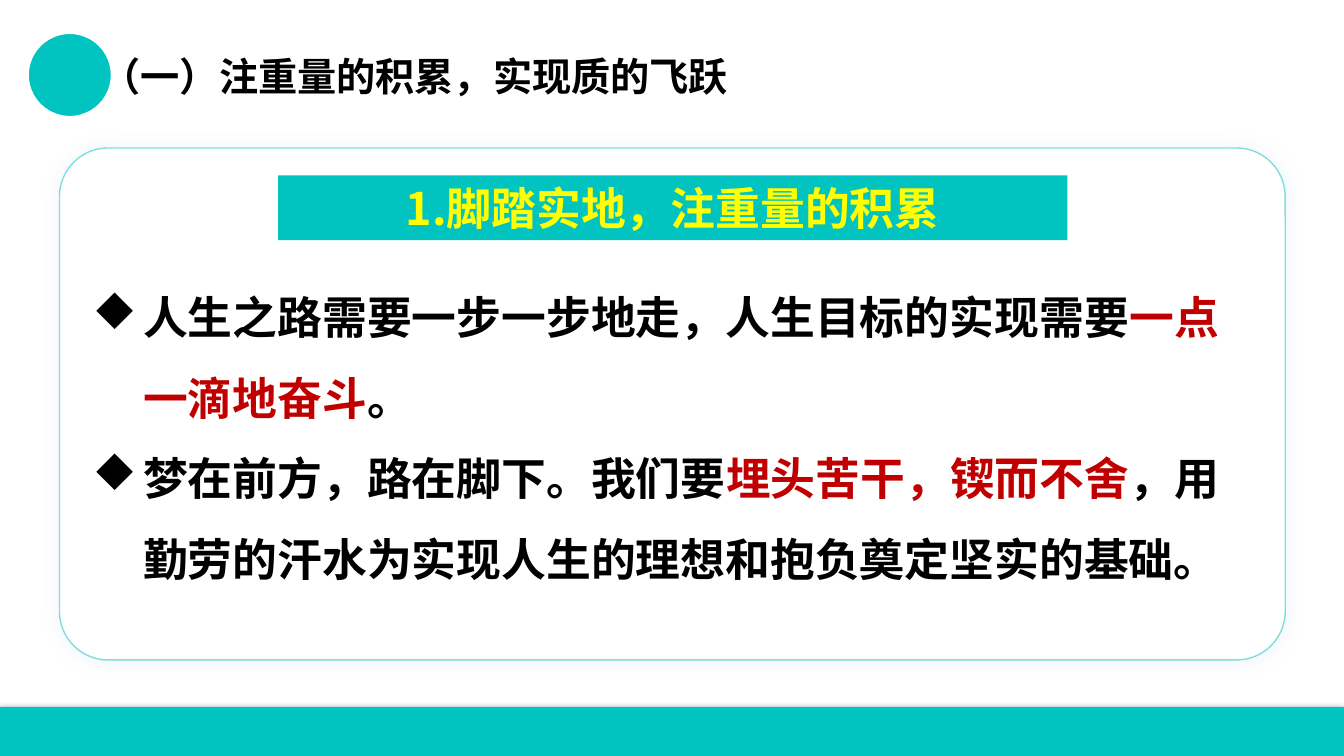
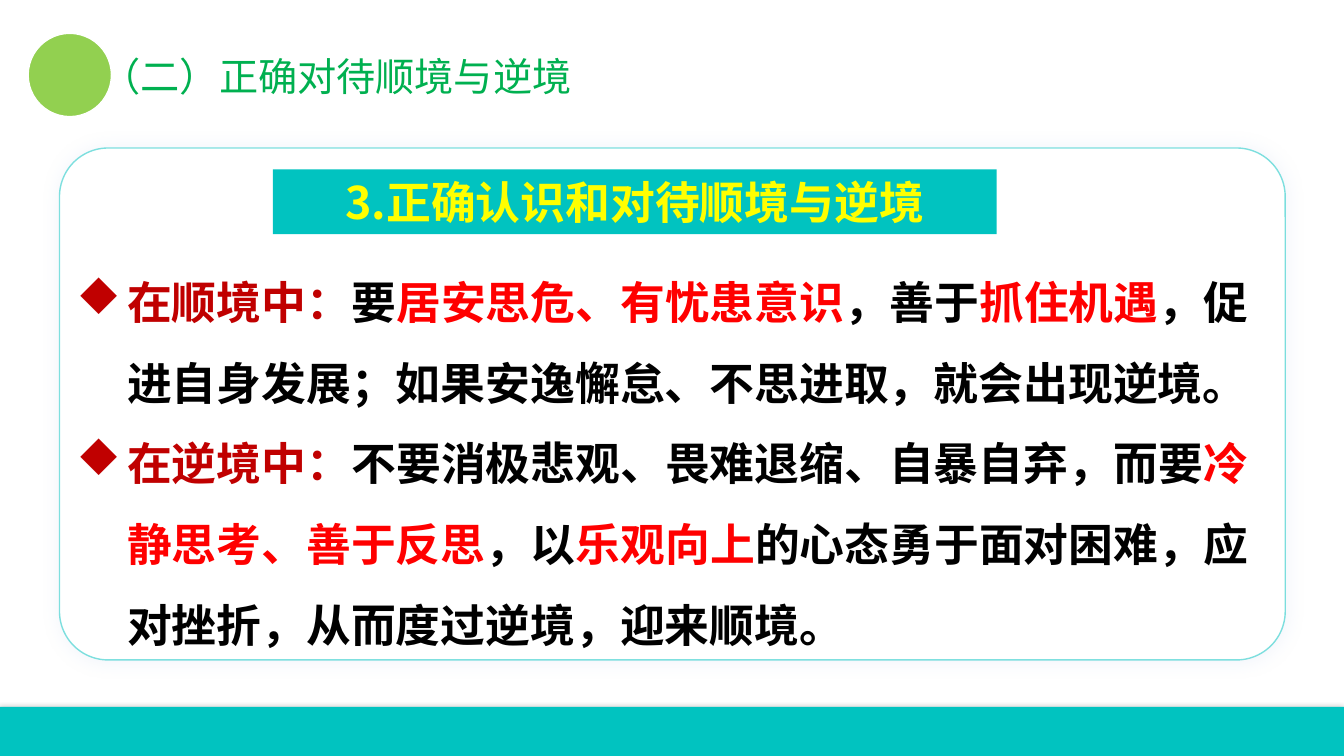
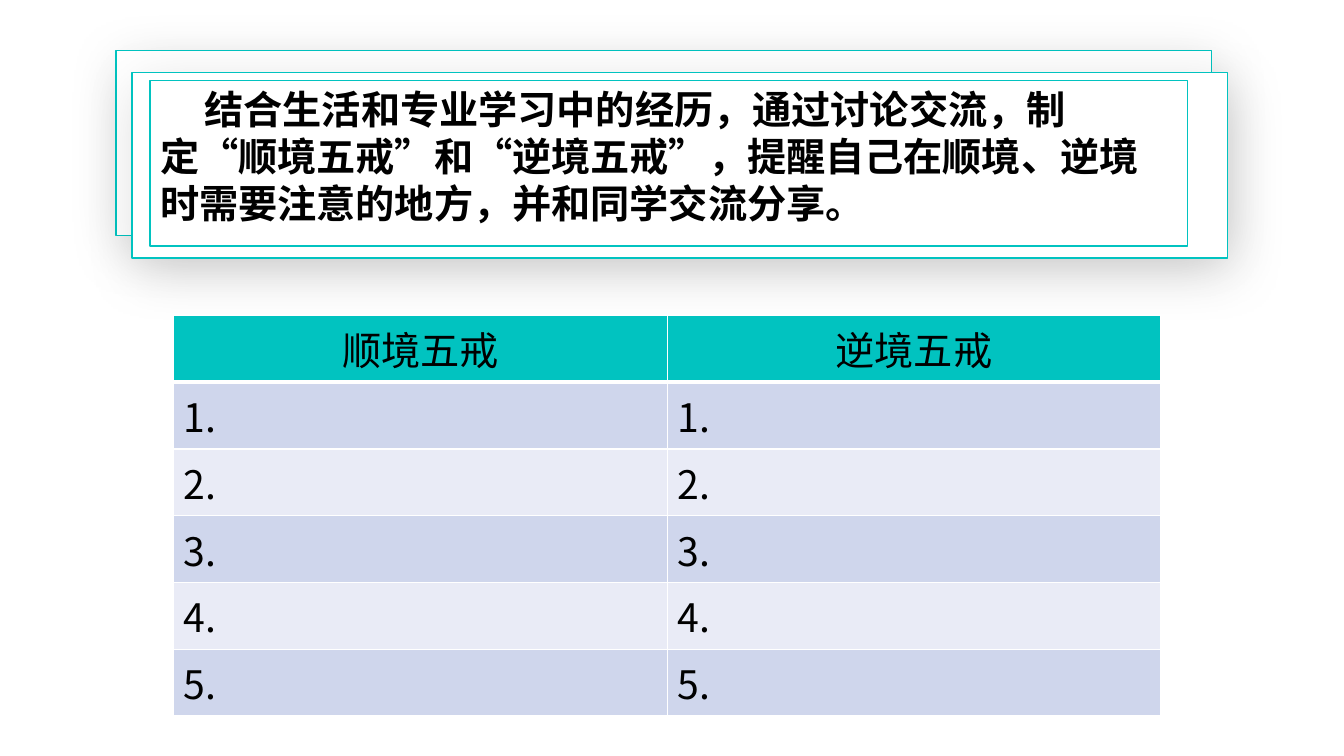
from lxml.etree import SubElement
from pptx import Presentation
from pptx.dml.color import RGBColor
from pptx.enum.shapes import MSO_SHAPE
from pptx.enum.text import MSO_ANCHOR, MSO_AUTO_SIZE, PP_ALIGN
from pptx.oxml.ns import qn
from pptx.util import Cm, Pt

FONT = "Noto Sans CJK SC"
TEAL = RGBColor(0x01, 0xC3, 0xC0)
LIME = RGBColor(0x92, 0xD0, 0x50)
GREEN = RGBColor(0x00, 0xB0, 0x50)
BLACK = RGBColor(0x00, 0x00, 0x00)
WHITE = RGBColor(0xFF, 0xFF, 0xFF)
YELLOW = RGBColor(0xFF, 0xFF, 0x00)
CRIMSON = RGBColor(0xC0, 0x00, 0x00)
RED = RGBColor(0xFF, 0x00, 0x00)
MIST = RGBColor(0xB6, 0xC7, 0xEA)
ROW_DARK = RGBColor(0xCF, 0xD6, 0xEC)
ROW_LIGHT = RGBColor(0xE9, 0xEB, 0xF6)

PAGE_WIDTH, PAGE_HEIGHT = 33.87, 19.05
HEADER = (0.71, 0.84, 21.9, 2.1)
CARD = (1.5, 3.73, 30.89, 12.9)
FOOTER = (0, 17.81, PAGE_WIDTH, 1.24)
PROMPT = (2.92, 1.27, 28.02, 5.23)
TABLE = (4.38, 7.95, 24.87, 10.08)
LINE_FACTOR = 1.2


def within(box, left, top, width, height):
    """Return an area given relative to the corner of a box."""
    return box[0] + left, box[1] + top, width, height


def add_shadow(shape, color, opacity, blur, distance, angle):
    """Give a shape an outer shadow."""
    effects = shape._element.spPr.find(qn("a:effectLst"))
    shadow = SubElement(effects, qn("a:outerShdw"), blurRad=str(Pt(blur)),
                        dist=str(Pt(distance)), dir=str(angle * 60000), rotWithShape="0")
    tint = SubElement(shadow, qn("a:srgbClr"), val=str(color))
    SubElement(tint, qn("a:alpha"), val=str(opacity * 1000))


def add_box(page, kind, area, fill, line=None, shadow=None):
    """Add a preset shape with a plain fill, outline and shadow."""
    shape = page.shapes.add_shape(kind, *map(Cm, area))
    shape.fill.solid()
    shape.fill.fore_color.rgb = fill
    if line is None:
        shape.line.fill.background()
    else:
        shape.line.color.rgb = line
        shape.line.width = Pt(1)
    shape.shadow.inherit = False
    if shadow:
        add_shadow(shape, *shadow)
    return shape


def style_font(para, size, bold):
    """Set the font of a whole paragraph, for Latin and Chinese text."""
    para.font.name = FONT
    para.font.size = Pt(size)
    para.font.bold = bold
    SubElement(para.font._element, qn("a:ea"), typeface=FONT)


def write_para(para, spans, size, bold=True, align=PP_ALIGN.LEFT, spacing=LINE_FACTOR):
    """Write coloured spans into a paragraph."""
    style_font(para, size, bold)
    para.alignment = align
    para.space_before = Pt(0)
    if spacing:
        para.line_spacing = Pt(round(size * spacing, 1))
    for text, color in spans:
        span = para.add_run()
        span.text = text
        span.font.color.rgb = color


def place_text(page, shape, area, anchor=MSO_ANCHOR.TOP):
    """Move a placeholder to an area, in front of what is drawn so far."""
    shape.left, shape.top, shape.width, shape.height = map(Cm, area)
    page.shapes._spTree.append(shape._element)
    frame = shape.text_frame
    frame.word_wrap = True
    frame.auto_size = MSO_AUTO_SIZE.NONE
    frame.vertical_anchor = anchor
    return frame


def set_indent(para, margin, first):
    """Set the left margin and first-line indent of a paragraph."""
    properties = para._p.get_or_add_pPr()
    properties.set("marL", str(Cm(margin)))
    properties.set("indent", str(Cm(first)))
    return properties


def add_header(page, box, text, text_color, dot_color, bold):
    """Draw the round mark and the title beside it."""
    add_box(page, MSO_SHAPE.OVAL, within(box, 0, 0, 2.1, 2.1), dot_color, WHITE)
    frame = place_text(page, page.shapes.title, within(box, 1.6, 0.35, 20.3, 1.45))
    write_para(frame.paragraphs[0], [(text, text_color)], 28, bold)


def add_card(page, box, heading, heading_area, items, items_area):
    """Draw the rounded card with its heading band and diamond list."""
    card = add_box(page, MSO_SHAPE.ROUNDED_RECTANGLE, box, WHITE, TEAL, (MIST, 20, 14, 1, 45))
    card.adjustments[0] = 0.095
    line_color = card.line._ln.find(".//" + qn("a:srgbClr"))
    SubElement(line_color, qn("a:alpha"), val="50000")

    band = add_box(page, MSO_SHAPE.RECTANGLE, within(box, *heading_area), TEAL)
    band.text_frame.word_wrap = True
    band.text_frame.vertical_anchor = MSO_ANCHOR.MIDDLE
    write_para(band.text_frame.paragraphs[0], [(heading, YELLOW)], 32, align=PP_ALIGN.CENTER)

    frame = place_text(page, page.placeholders[1], within(box, *items_area))
    for index, spans in enumerate(items):
        para = frame.add_paragraph() if index else frame.paragraphs[0]
        properties = set_indent(para, 1.27, -1.27)
        SubElement(properties, qn("a:buFont"), typeface="Wingdings", charset="2")
        SubElement(properties, qn("a:buChar"), char="u")
        write_para(para, spans, 32, spacing=1.5 * LINE_FACTOR)


def add_lesson_page(deck, header, card):
    """Build a page with a header, a card and the footer band."""
    page = deck.slides.add_slide(deck.slide_layouts[1])
    add_box(page, MSO_SHAPE.RECTANGLE, FOOTER, TEAL, shadow=(BLACK, 30, 3, 1, 180))
    add_header(page, HEADER, *header)
    add_card(page, CARD, *card)


def add_prompt(page, box, text):
    """Draw two stacked sheets with the framed task on top."""
    for left, top in ((0, 0), (0.41, 0.56)):
        add_box(page, MSO_SHAPE.RECTANGLE, within(box, left, top, 27.61, 4.67),
                WHITE, TEAL, (BLACK, 15, 40, 10, 70))
    title = page.shapes.title
    title.line.color.rgb = TEAL
    title.line.width = Pt(0.75)
    frame = place_text(page, title, within(box, 0.86, 0.76, 26.14, 4.17))
    para = frame.paragraphs[0]
    set_indent(para, 0, 1.12)
    write_para(para, [(text, BLACK)], 28)


def set_borders(cell, bottom):
    """Give a cell white borders with a chosen bottom width."""
    properties = cell._tc.get_or_add_tcPr()
    for side, width in (("lnL", 1), ("lnR", 1), ("lnT", 1), ("lnB", bottom)):
        line = SubElement(properties, qn("a:" + side), w=str(Pt(width)))
        fill = SubElement(line, qn("a:solidFill"))
        SubElement(fill, qn("a:srgbClr"), val=str(WHITE))


def add_rules_table(page, box, headings, count):
    """Draw a table of numbered blanks under headings."""
    rows = [headings] + [[f"{number}."] * len(headings) for number in range(1, count + 1)]
    table = page.shapes.add_table(len(rows), len(headings), *map(Cm, box)).table
    for row_index, texts in enumerate(rows):
        is_head = row_index == 0
        color = TEAL if is_head else (ROW_LIGHT, ROW_DARK)[row_index % 2]
        align = PP_ALIGN.CENTER if is_head else PP_ALIGN.LEFT
        for column_index, text in enumerate(texts):
            cell = table.cell(row_index, column_index)
            set_borders(cell, 3 if is_head else 1)
            cell.fill.solid()
            cell.fill.fore_color.rgb = color
            write_para(cell.text_frame.paragraphs[0], [(text, BLACK)], 28, False, align, None)


def add_task_page(deck):
    """Build the discussion page."""
    page = deck.slides.add_slide(deck.slide_layouts[5])
    add_prompt(page, PROMPT, "结合生活和专业学习中的经历，通过讨论交流，制定“顺境五戒”和“逆境五戒”，"
                             "提醒自己在顺境、逆境时需要注意的地方，并和同学交流分享。")
    add_rules_table(page, TABLE, ["顺境五戒", "逆境五戒"], 5)


def main():
    """Build and save the deck."""
    deck = Presentation()
    deck.slide_width, deck.slide_height = Cm(PAGE_WIDTH), Cm(PAGE_HEIGHT)
    add_lesson_page(
        deck,
        ("（一）注重量的积累，实现质的飞跃", BLACK, TEAL, True),
        ("1.脚踏实地，注重量的积累", (5.51, 0.69, 19.89, 1.63), [
            [("人生之路需要一步一步地走，人生目标的实现需要", BLACK),
             ("一点一滴地奋斗", CRIMSON), ("。", BLACK)],
            [("梦在前方，路在脚下。我们要", BLACK), ("埋头苦干，锲而不舍", CRIMSON),
             ("，用勤劳的汗水为实现人生的理想和抱负奠定坚实的基础。", BLACK)],
        ], (0.58, 2.77, 29.03, 8.46)))
    add_lesson_page(
        deck,
        ("（二）正确对待顺境与逆境", GREEN, LIME, False),
        ("3.正确认识和对待顺境与逆境", (5.38, 0.54, 18.24, 1.63), [
            [("在顺境中：", CRIMSON), ("要", BLACK), ("居安思危、有忧患意识", RED),
             ("，善于", BLACK), ("抓住机遇", RED),
             ("，促进自身发展；如果安逸懈怠、不思进取，就会出现逆境。", BLACK)],
            [("在逆境中：", CRIMSON), ("不要消极悲观、畏难退缩、自暴自弃，而要", BLACK),
             ("冷静思考、善于反思", RED), ("，以", BLACK), ("乐观向上", RED),
             ("的心态勇于面对困难，应对挫折，从而度过逆境，迎来顺境。", BLACK)],
        ], (0.18, 2.39, 30.48, 10.34)))
    add_task_page(deck)
    deck.save("out.pptx")


if __name__ == "__main__":
    main()
